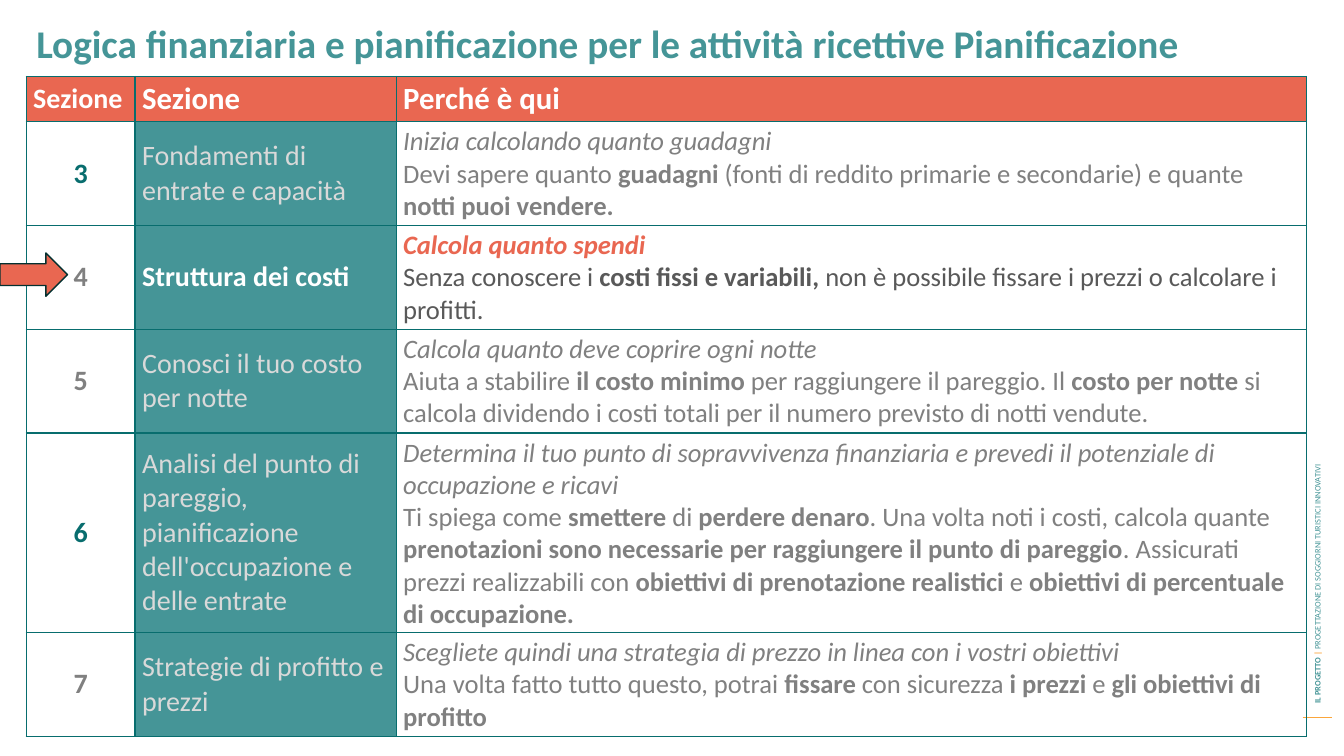
from lxml import etree
from pptx import Presentation
from pptx import util as u
from pptx.dml.color import RGBColor
from pptx.enum import shapes, text
from pptx.oxml import ns

TEAL = RGBColor(0x45, 0x95, 0x97)
DEEP = RGBColor(0x08, 0x6D, 0x6E)
CORAL = RGBColor(0xE9, 0x67, 0x51)
AMBER = RGBColor(0xFB, 0xA6, 0x3B)
INK = RGBColor(0x04, 0x30, 0x30)
GREY = RGBColor(0x80, 0x80, 0x80)
DARK = RGBColor(0x59, 0x59, 0x59)
PALE = RGBColor(0xD9, 0xD9, 0xD9)
WHITE = RGBColor(0xFF, 0xFF, 0xFF)

TITLE = "Logica finanziaria e pianificazione per le attività ricettive Pianificazione"
HEADS = [("Sezione", 20), ("Sezione", 22), ("Perché è qui", 22)]
ACTIVE = "4"
# number, number colour, section, lead, reason with *bold* parts
ROWS = [
    ("3", DEEP, "Fondamenti di entrate e capacità",
     "Inizia calcolando quanto guadagni",
     "Devi sapere quanto *guadagni *(fonti di reddito primarie e secondarie) "
     "e quante *notti puoi vendere.*"),
    ("4", GREY, "Struttura dei costi",
     "Calcola quanto spendi",
     "Senza conoscere i *costi fissi e variabili, *non è possibile fissare "
     "i prezzi o calcolare i profitti."),
    ("5", GREY, "Conosci il tuo costo per notte",
     "Calcola quanto deve coprire ogni notte",
     "Aiuta a stabilire *il costo minimo *per raggiungere il pareggio. "
     "Il *costo per notte *si calcola dividendo i costi totali per il numero "
     "previsto di notti vendute."),
    ("6", DEEP, "Analisi del punto di pareggio, pianificazione "
     "dell'occupazione e delle entrate",
     "Determina il tuo punto di sopravvivenza finanziaria e prevedi il "
     "potenziale di occupazione e ricavi",
     "Ti spiega come *smettere* di *perdere denaro*. Una volta noti i costi, "
     "calcola quante *prenotazioni sono necessarie per raggiungere il punto di "
     "pareggio*. Assicurati prezzi realizzabili con *obiettivi di prenotazione "
     "realistici *e *obiettivi di percentuale di occupazione.*"),
    ("7", GREY, "Strategie di profitto e prezzi",
     "Scegliete quindi una strategia di prezzo in linea con i vostri obiettivi",
     "Una volta fatto tutto questo, potrai *fissare* con sicurezza *i prezzi *e "
     "*gli obiettivi di profitto*"),
]
FOOTER = [("IL PROGETTO ", TEAL, True), ("| ", AMBER, True),
          ("PROGETTAZIONE DI SOGGIORNI TURISTICI INNOVATIVI", TEAL, False)]
WIDTHS = [1.08, 2.59, 9.03]
HEIGHTS = [0.3] + [0.74] * len(ROWS)


def box(*sizes):
    return [u.Inches(size) for size in sizes]


def write(par, words, size, color, bold=False, italic=False):
    run = par.add_run()
    run.text = words
    font = run.font
    font.name, font.size = "Calibri", u.Pt(size)
    font.color.rgb = color
    font.bold, font.italic = bold, italic


def dress(cell, fill=None):
    """Set the fill, margins, anchor and borders of a cell."""
    cell.margin_left = cell.margin_right = u.Inches(0.07)
    cell.margin_top = cell.margin_bottom = u.Inches(0.04)
    cell.vertical_anchor = text.MSO_ANCHOR.MIDDLE
    if fill is None:
        cell.fill.background()
    else:
        cell.fill.solid()
        cell.fill.fore_color.rgb = fill
    props = cell._tc.get_or_add_tcPr()
    for spot, side in enumerate(("lnL", "lnR", "lnT", "lnB")):
        edge = etree.Element(ns.qn("a:" + side), w=str(u.Pt(1)))
        solid = etree.SubElement(edge, ns.qn("a:solidFill"))
        etree.SubElement(solid, ns.qn("a:srgbClr"), val=str(DEEP))
        props.insert(spot, edge)


def add_title(slide):
    title = slide.shapes.title
    title.left, title.top, title.width, title.height = box(0.26, 0.14, 12.01, 0.88)
    frame = title.text_frame
    frame.auto_size = text.MSO_AUTO_SIZE.NONE
    frame.vertical_anchor = text.MSO_ANCHOR.TOP
    par = frame.paragraphs[0]
    par.alignment = text.PP_ALIGN.LEFT
    write(par, TITLE, 28, TEAL, True)


def add_footer(slide):
    rule = slide.shapes.add_connector(
        shapes.MSO_CONNECTOR.STRAIGHT, *box(12.92, 7.12, 13.21, 7.12))
    rule.line.color.rgb = AMBER
    rule.line.width = u.Pt(0.75)
    etree.SubElement(rule._element.spPr, ns.qn("a:effectLst"))
    label = slide.shapes.add_textbox(*box(10.18, 4.09, 5.77, 0.2))
    label.rotation = 270
    frame = label.text_frame
    frame.word_wrap = True
    frame.vertical_anchor = text.MSO_ANCHOR.MIDDLE
    for words, color, bold in FOOTER:
        write(frame.paragraphs[0], words, 6, color, bold)


def add_plan(slide):
    count = len(ROWS) + 1
    table = slide.shapes.add_table(
        count, 3, *box(0.26, 0.76, sum(WIDTHS), sum(HEIGHTS))).table
    table.horz_banding = False
    for col, width in zip(table.columns, WIDTHS):
        col.width = u.Inches(width)
    for row, height in zip(table.rows, HEIGHTS):
        row.height = u.Inches(height)
    for col, (words, size) in enumerate(HEADS):
        cell = table.cell(0, col)
        dress(cell, CORAL)
        write(cell.text_frame.paragraphs[0], words, size, WHITE, True)
    for row, (number, color, name, lead, reason) in enumerate(ROWS, 1):
        active = number == ACTIVE
        cells = [table.cell(row, col) for col in range(3)]
        for cell, fill in zip(cells, (None, TEAL, None)):
            dress(cell, fill)
        mark, label, first = [cell.text_frame.paragraphs[0] for cell in cells]
        mark.alignment = text.PP_ALIGN.CENTER
        write(mark, number, 20, color, True)
        write(label, name, 20, WHITE if active else PALE, active)
        write(first, lead, 19, CORAL if active else GREY, active, True)
        par = cells[2].text_frame.add_paragraph()
        for spot, part in enumerate(reason.split("*")):
            if part:
                write(par, part, 19, DARK if active else GREY, spot % 2 == 1)


def add_arrow(slide):
    arrow = slide.shapes.add_shape(
        shapes.MSO_SHAPE.RIGHT_ARROW, *box(0, 2.51, 0.67, 0.43))
    arrow.shadow.inherit = False
    arrow.fill.solid()
    arrow.fill.fore_color.rgb = CORAL
    arrow.line.color.rgb = INK
    arrow.line.width = u.Pt(1)


def main():
    deck = Presentation()
    deck.slide_width, deck.slide_height = box(13.33, 7.5)
    slide = deck.slides.add_slide(deck.slide_layouts[5])
    add_footer(slide)
    add_title(slide)
    add_plan(slide)
    add_arrow(slide)
    deck.save("out.pptx")


if __name__ == "__main__":
    main()
